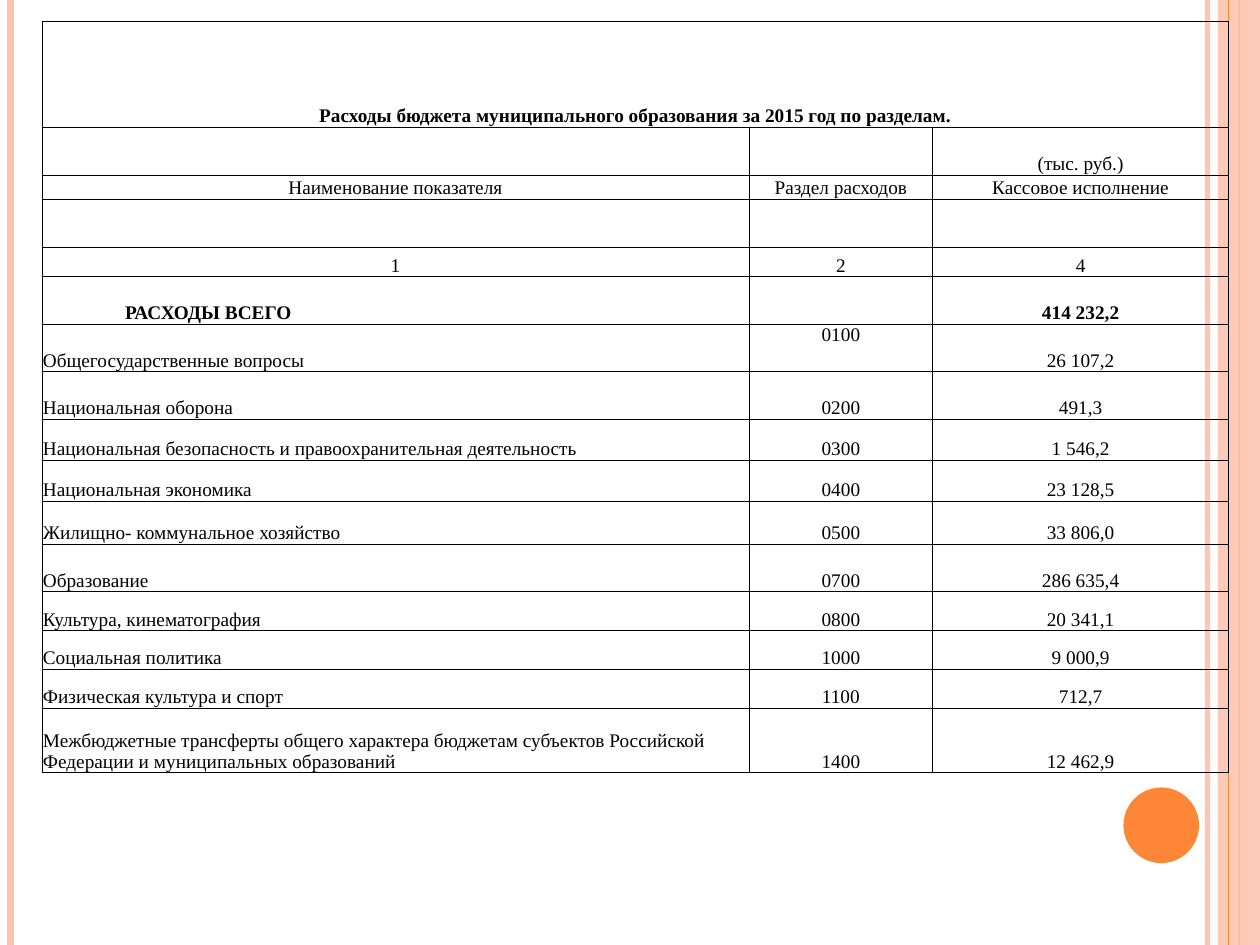
from pptx import Presentation
from pptx.dml.color import RGBColor
from pptx.enum.shapes import MSO_CONNECTOR, MSO_SHAPE
from pptx.enum.text import MSO_ANCHOR, PP_ALIGN
from pptx.oxml.ns import qn
from pptx.util import Pt
from lxml.etree import SubElement

COLORS = {"peach": "FEC3AE", "orange": "FE8637", "ink": "000000"}
HEIGHT = 540
COLUMNS = [404, 105, 169]
TITLE = "Расходы бюджета муниципального образования за 2015 год по разделам."
TOTAL = "РАСХОДЫ ВСЕГО"
ROWS = [
    (60.5, TITLE, "", ""),
    (27.4, "", "", "(тыс. руб.)"),
    (13.7, "Наименование показателя", "Раздел расходов", "Кассовое исполнение"),
    (27.4, "", "", ""),
    (17, "1", "2", "4"),
    (27, TOTAL, "", "414 232,2"),
    (27.4, "Общегосударственные вопросы", "0100", "26 107,2"),
    (27, "Национальная оборона", "0200", "491,3"),
    (23.4, "Национальная безопасность и правоохранительная деятельность", "0300", "1 546,2"),
    (23.4, "Национальная экономика", "0400", "23 128,5"),
    (24.6, "Жилищно- коммунальное хозяйство", "0500", "33 806,0"),
    (27.4, "Образование", "0700", "286 635,4"),
    (22.2, "Культура, кинематография", "0800", "20 341,1"),
    (22, "Социальная политика", "1000", "9 000,9"),
    (22.2, "Физическая культура и спорт", "1100", "712,7"),
    (37, "Межбюджетные трансферты общего характера бюджетам субъектов Российской "
         "Федерации и муниципальных образований", "1400", "12 462,9"),
]
TOTAL_ROW = 5


class SlideBuilder:
    font = "Times New Roman"
    size = 11
    border = 0.5

    def __init__(self, slide):
        self.slide = slide

    def rgb(self, name):
        return RGBColor.from_string(COLORS[name])

    def set_alpha(self, shape, percent):
        clr = next(shape._element.spPr.iter(qn("a:srgbClr")))
        SubElement(clr, qn("a:alpha")).set("val", str(percent * 1000))

    def stripe(self, x, color, width, alpha=100):
        s = self.slide.shapes.add_connector(
            MSO_CONNECTOR.STRAIGHT, Pt(x), Pt(0), Pt(x), Pt(HEIGHT))
        s.line.color.rgb = self.rgb(color)
        s.line.width = Pt(width)
        SubElement(s._element.spPr, qn("a:effectLst"))
        if alpha < 100:
            self.set_alpha(s, alpha)

    def shape(self, kind, x, y, w, h, color, alpha=100):
        s = self.slide.shapes.add_shape(kind, Pt(x), Pt(y), Pt(w), Pt(h))
        s.shadow.inherit = False
        s.fill.solid()
        s.fill.fore_color.rgb = self.rgb(color)
        s.line.fill.background()
        if alpha < 100:
            self.set_alpha(s, alpha)

    def cell(self, cell, text, align, bold):
        cell.margin_left = cell.margin_right = cell.margin_top = Pt(0.5)
        cell.margin_bottom = Pt(0)
        cell.vertical_anchor = MSO_ANCHOR.BOTTOM
        p = cell.text_frame.paragraphs[0]
        p.alignment = align
        p.font.name = self.font
        p.font.size = Pt(self.size)
        p.font.bold = bold
        p.font.color.rgb = self.rgb("ink")
        if text:
            p.add_run().text = text
        self.cell_borders(cell)
        cell.fill.background()

    def cell_borders(self, cell):
        props = cell._tc.get_or_add_tcPr()
        for side in ("a:lnL", "a:lnR", "a:lnT", "a:lnB"):
            ln = SubElement(props, qn(side), w=str(Pt(self.border)))
            fill = SubElement(ln, qn("a:solidFill"))
            SubElement(fill, qn("a:srgbClr"), val=COLORS["ink"])

    def table(self, x, y, columns, rows):
        frame = self.slide.shapes.add_table(
            len(rows), len(columns), Pt(x), Pt(y),
            Pt(sum(columns)), Pt(sum(row[0] for row in rows)))
        table = frame.table
        table.first_row = table.horz_banding = False
        for column, width in zip(table.columns, columns):
            column.width = Pt(width)
        for i, (height, *texts) in enumerate(rows):
            table.rows[i].height = Pt(height)
            for j, text in enumerate(texts):
                left = j == 0 and i >= TOTAL_ROW
                align = PP_ALIGN.LEFT if left else PP_ALIGN.CENTER
                self.cell(table.cell(i, j), text, align, i in (0, TOTAL_ROW))
        table.cell(0, 0).merge(table.cell(0, len(columns) - 1))
        return table


def main():
    prs = Presentation()
    prs.slide_width, prs.slide_height = Pt(720), Pt(HEIGHT)
    b = SlideBuilder(prs.slides.add_slide(prs.slide_layouts[6]))
    b.stripe(690, "peach", 3, 93)
    b.stripe(6, "peach", 4.5)
    b.stripe(708, "orange", 1.5)
    b.shape(MSO_SHAPE.RECTANGLE, 696, 0, 24, HEIGHT, "peach", 87)
    b.stripe(702, "orange", 0.75)
    b.shape(MSO_SHAPE.OVAL, 642, 450, 43.2, 43.2, "orange")
    table = b.table(24, 12.2, COLUMNS, ROWS)
    table.cell(TOTAL_ROW, 0).margin_left = Pt(47.5)
    table.cell(TOTAL_ROW + 1, 1).vertical_anchor = MSO_ANCHOR.TOP
    prs.save("out.pptx")


if __name__ == "__main__":
    main()
